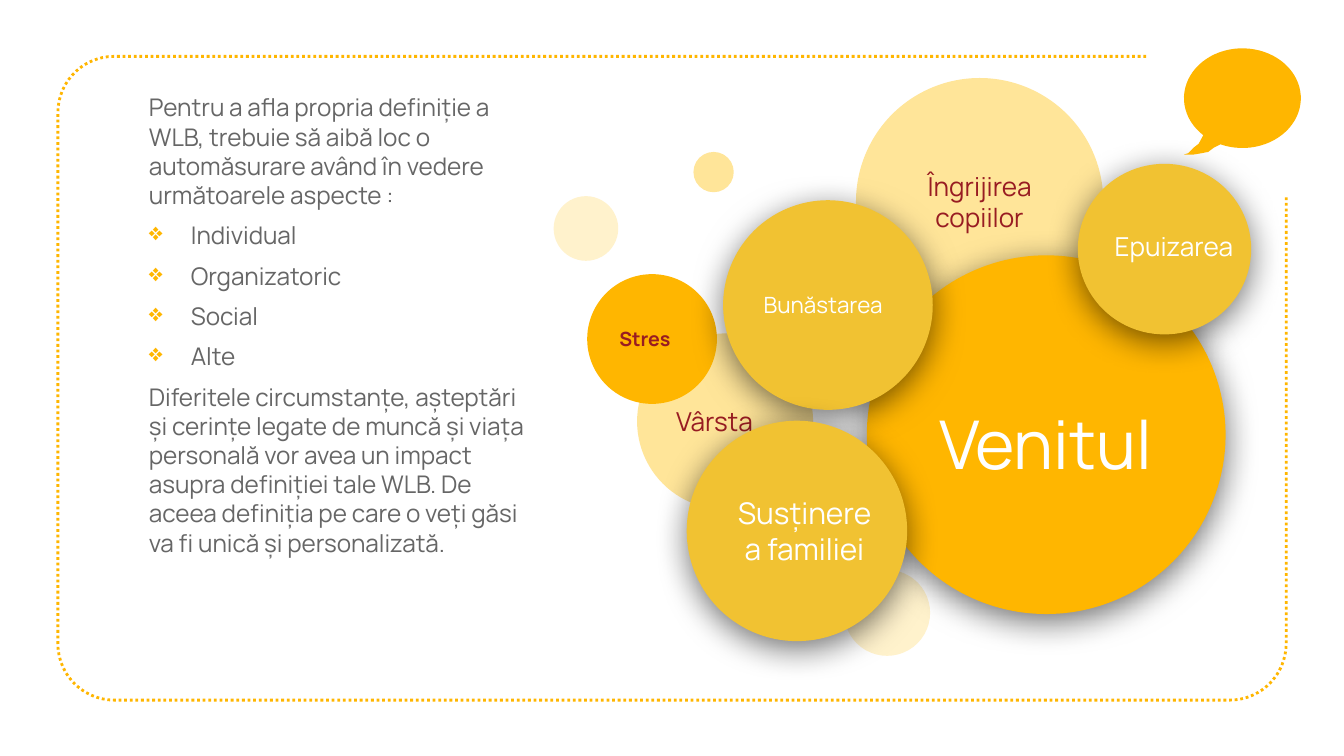
from math import cos, radians, sin

from lxml.etree import SubElement
from pptx import Presentation
from pptx.dml.color import RGBColor
from pptx.enum.dml import MSO_LINE
from pptx.enum.shapes import MSO_SHAPE
from pptx.enum.text import MSO_ANCHOR, PP_ALIGN
from pptx.oxml.ns import qn
from pptx.util import Pt

FONT = "Manrope"
AMBER = RGBColor(0xFF, 0xB6, 0x00)
GOLD = RGBColor(0xF1, 0xC2, 0x32)
SAND = RGBColor(0xFF, 0xE5, 0x99)
CREAM = RGBColor(0xFF, 0xF2, 0xCC)
RED = RGBColor(0x98, 0x1C, 0x22)
GREY = RGBColor(0x66, 0x66, 0x66)
WHITE = RGBColor(0xFF, 0xFF, 0xFF)

INTRO = ("Pentru a afla propria definiție a WLB, trebuie să aibă loc o "
         "automăsurare având în vedere următoarele aspecte :")
ASPECTS = ["Individual", "Organizatoric", "Social", "Alte"]
CLOSING = ("Diferitele circumstanțe, așteptări și cerințe legate de muncă și "
           "viața personală vor avea un impact asupra definiției tale WLB. De "
           "aceea definiția pe care o veți găsi va fi unică și personalizată.")


def add_run(para, text, size, color, bold=False):
    run = para.add_run()
    run.text = text
    font = run.font
    font.name, font.size, font.bold = FONT, Pt(size), bold
    font.color.rgb = color


def set_frame(shape, anchor):
    frame = shape.text_frame
    frame.word_wrap = True
    frame.vertical_anchor = anchor
    frame.margin_left = frame.margin_right = Pt(7.2)
    frame.margin_top = frame.margin_bottom = Pt(7.2)
    return frame


def add_label(shape, text, size, color, align=PP_ALIGN.CENTER, bold=False):
    para = set_frame(shape, MSO_ANCHOR.MIDDLE).paragraphs[0]
    para.alignment = align
    add_run(para, text, size, color, bold)


def add_solid(slide, kind, box, color):
    shape = slide.shapes.add_shape(kind, *map(Pt, box))
    shape.shadow.inherit = False
    shape.fill.solid()
    shape.fill.fore_color.rgb = color
    shape.line.fill.background()
    return shape


def add_disc(slide, x, y, size, color, high=None):
    return add_solid(slide, MSO_SHAPE.OVAL, (x, y, size, high or size), color)


def add_shadow(shape):
    """Soft black shadow straight below the shape."""
    effects = shape.element.spPr.find(qn("a:effectLst"))
    outer = SubElement(effects, qn("a:outerShdw"), blurRad=str(Pt(18)),
                       dist=str(Pt(4)), dir="5400000", algn="bl",
                       rotWithShape="0")
    black = SubElement(outer, qn("a:srgbClr"), val="000000")
    SubElement(black, qn("a:alpha"), val="55000")


def add_box(slide, box):
    return slide.shapes.add_textbox(*map(Pt, box))


def arc(x, y, wide, high, start, end, step):
    """Points on an ellipse around (x, y), clockwise in degrees."""
    return [(x + wide * cos(radians(a)), y + high * sin(radians(a)))
            for a in range(start, end + 1, step)]


def add_path(slide, points, close):
    first, *rest = [(Pt(x), Pt(y)) for x, y in points]
    build = slide.shapes.build_freeform(*first)
    build.add_line_segments(rest, close=close)
    shape = build.convert_to_shape()
    shape.shadow.inherit = False
    return shape


def add_border(slide):
    left, top, right, low, bend = 31, 30.2, 689, 375.1, 30.2
    corners = [(left + bend, top + bend, 270), (left + bend, low - bend, 180),
               (right - bend, low - bend, 90)]
    points = [(614, top)]
    for x, y, end in corners:
        points += reversed(arc(x, y, bend, bend, end - 90, end, 6))
    points.append((right, 105))
    border = add_path(slide, points, False)
    border.fill.background()
    border.line.color.rgb = AMBER
    border.line.width = Pt(1.5)
    border.line.dash_style = MSO_LINE.ROUND_DOT


def add_bubble(slide):
    tail = [(650.2, 79.2), (647.3, 81.4), (643.7, 82.1), (639.4, 82.8),
            (634.3, 82.8), (636.5, 82.1), (639.4, 79.2), (642.2, 77)]
    bubble = add_path(slide, arc(665.6, 52.6, 31.3, 26.7, 132, 472, 5) + tail,
                      True)
    bubble.fill.solid()
    bubble.fill.fore_color.rgb = AMBER
    bubble.line.fill.background()


def add_bullet(para):
    props = para._p.get_or_add_pPr()
    props.set("marL", str(Pt(22.5)))
    props.set("indent", str(Pt(-22.5)))
    tint = SubElement(props, qn("a:buClr"))
    SubElement(tint, qn("a:srgbClr"), val=str(AMBER))
    SubElement(props, qn("a:buChar"), char="❖")


def add_story(slide):
    box = add_box(slide, (72.7, 42.5, 223.2, 326.2))
    frame = set_frame(box, MSO_ANCHOR.TOP)
    for i, text in enumerate([INTRO, *ASPECTS, CLOSING]):
        para = frame.add_paragraph() if i else frame.paragraphs[0]
        para.space_before = Pt(6)
        if text in ASPECTS:
            add_bullet(para)
        add_run(para, text, 13, GREY)


def add_raised(slide, disc, box, color, text, size):
    """Shadowed disc with its caption in a box of its own."""
    add_shadow(add_disc(slide, *disc[:3], color, *disc[3:]))
    add_label(add_box(slide, box), text, size, WHITE)


def main():
    deck = Presentation()
    deck.slide_width, deck.slide_height = Pt(720), Pt(405)
    slide = deck.slides.add_slide(deck.slide_layouts[6])
    add_border(slide)

    add_disc(slide, 452.2, 305.3, 46.1, CREAM)
    add_disc(slide, 296.6, 105.1, 34.6, CREAM)
    age = add_disc(slide, 341.3, 178.6, 94.3, SAND)
    add_label(age, "Vârsta", 14, RED, PP_ALIGN.LEFT)
    care = add_disc(slide, 458.6, 41.8, 132.5, SAND)
    add_label(care, "Îngrijirea copiilor", 14, RED)
    stress = add_disc(slide, 314.6, 146.9, 69.5, AMBER)
    add_label(stress, "Stres", 10.5, RED, PP_ALIGN.LEFT, True)
    add_disc(slide, 371.5, 81.4, 21.6, SAND)

    add_shadow(add_disc(slide, 464.4, 136.8, 192.2, AMBER))
    income = add_solid(slide, MSO_SHAPE.RECTANGLE,
                       (486.7, 191.5, 146.9, 91.4), AMBER)
    add_label(income, "Venitul", 36, WHITE)

    add_raised(slide, (387.4, 107.3, 112.3), (400.3, 126, 81.4, 74.2),
               GOLD, "Bunăstarea", 12)
    add_raised(slide, (367.9, 225.4, 118.1), (384.5, 247, 92.9, 74.2),
               GOLD, "Susținerea familiei", 16)
    add_raised(slide, (577.4, 87.8, 92.9, 91.4), (586.1, 98.6, 85.7, 67),
               GOLD, "Epuizarea", 14)

    add_story(slide)
    add_bubble(slide)
    deck.save("out.pptx")


if __name__ == "__main__":
    main()
